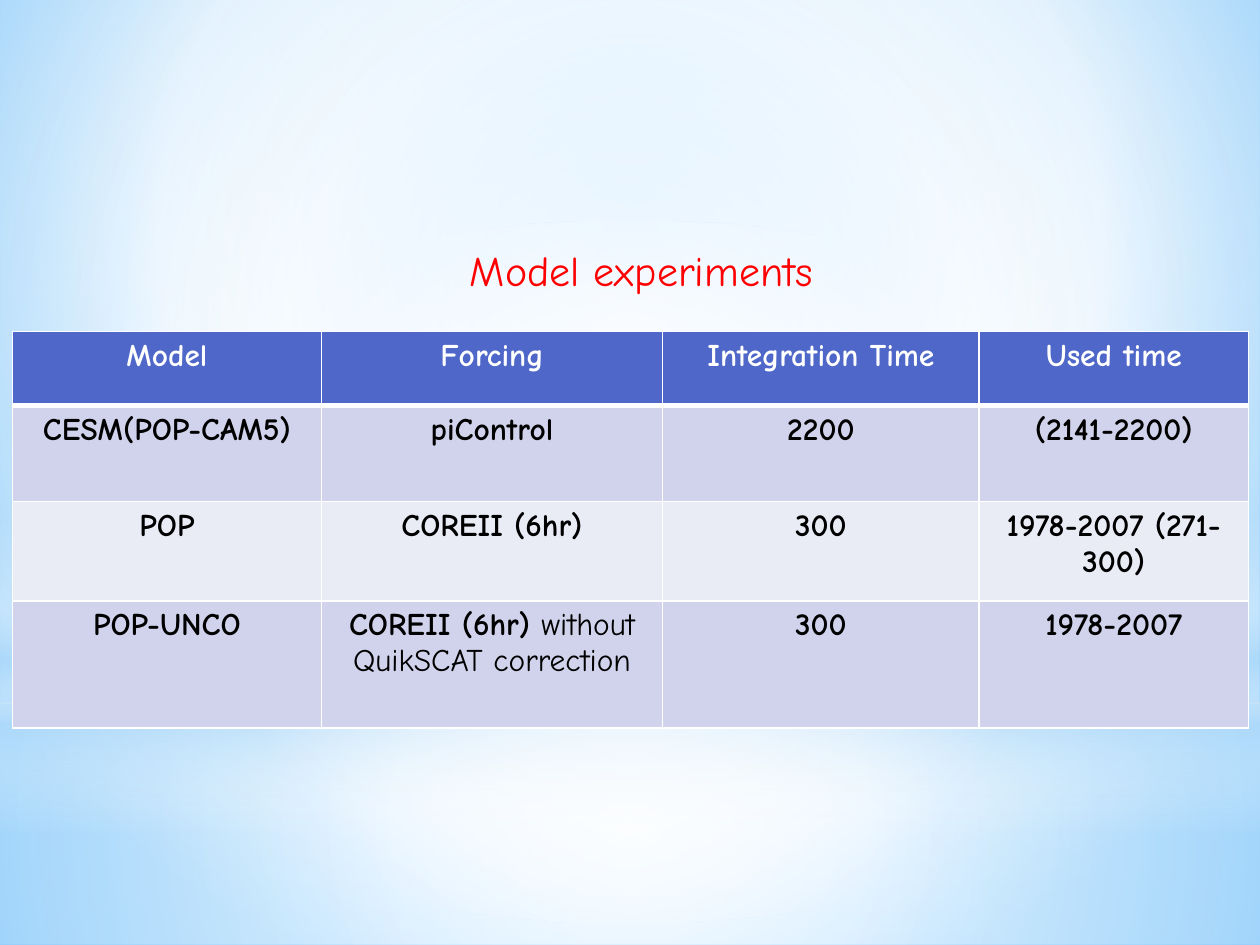
from dataclasses import dataclass

from lxml import etree
from pptx import Presentation
from pptx import util as u
from pptx.dml.color import RGBColor
from pptx.enum import shapes, text
from pptx.oxml.ns import qn


@dataclass(frozen=True)
class Theme:
    font: str = "Comic Neue"
    title_size: int = 24
    table_size: int = 18
    title: str = "FF0000"
    header: str = "4E67C8"
    bands: tuple = ("D0D3EB", "E9EBF5")
    white: str = "FFFFFF"
    ink: str = "000000"
    sky: str = "B4DCFA"
    sky_mid: str = "9ED5FF"
    sky_deep: str = "5BB9FF"


T = Theme()
W, H = 10, 7.5
CENTRE = (50, 50, 50, 50)

COLS = (2.45, 2.71, 2.51, 2.14)
ROWS = (0.59, 0.76, 0.79, 1.01)
# Each cell is its bold text, optionally followed by regular text
EXPERIMENTS = (
    (("Model",), ("Forcing",), ("Integration Time",), ("Used time",)),
    (("CESM(POP-CAM5)",), ("piControl",), ("2200",), ("(2141-2200)",)),
    (("POP",), ("COREII (6hr)",), ("300",), ("1978-2007 (271-300)",)),
    (("POP-UNCO",), ("COREII (6hr) ", "without QuikSCAT correction"),
     ("300",), ("1978-2007",)),
)


def rgb(color):
    return RGBColor.from_string(color)


def add_color(parent, color, alpha=100):
    clr = etree.SubElement(parent, qn("a:srgbClr"), val=color)
    if alpha < 100:
        etree.SubElement(clr, qn("a:alpha"), val=str(alpha * 1000))


def set_gradient(owner, fill, stops, focus=None, angle=90):
    """Radial gradient around focus (l, t, r, b in %), or linear at angle."""
    fill.solid()
    solid = owner.find(".//" + qn("a:solidFill"))
    grad = etree.Element(qn("a:gradFill"), rotWithShape="1")
    gs_list = etree.SubElement(grad, qn("a:gsLst"))
    for pos, *color in stops:
        add_color(etree.SubElement(gs_list, qn("a:gs"), pos=str(pos * 1000)), *color)
    if focus:
        radial = etree.SubElement(grad, qn("a:path"), path="circle")
        etree.SubElement(radial, qn("a:fillToRect"),
                         {k: str(v * 1000) for k, v in zip("ltrb", focus)})
    else:
        etree.SubElement(grad, qn("a:lin"), ang=str(angle * 60000), scaled="0")
    solid.getparent().replace(solid, grad)


def add_glow(s, kind, top, height, stops, focus=CENTRE):
    """Full-width translucent layer; top and height are shares of the slide."""
    sp = s.shapes.add_shape(kind, 0, u.Inches(top * H), u.Inches(W), u.Inches(height * H))
    sp.shadow.inherit = False
    sp.line.fill.background()
    set_gradient(sp._element.spPr, sp.fill, stops, focus)


def add_backdrop(s):
    rect, oval = shapes.MSO_SHAPE.RECTANGLE, shapes.MSO_SHAPE.OVAL
    set_gradient(s.element, s.background.fill,
                 [(0, T.sky_mid), (60, T.white), (100, T.sky_deep)], (20, 10, 20, 60))
    horizon = 0.744
    add_glow(s, rect, horizon, 1 - horizon,
             [(0, T.white, 91), (37, T.white, 76), (100, T.sky, 79)])
    add_glow(s, rect, 0, horizon,
             [(0, T.white, 89), (48, T.white, 62), (100, T.sky, 79)])
    add_glow(s, rect, 0.55, 1 / 3,
             [(0, T.white, 0), (29, T.white, 30), (45, T.sky, 40),
              (55, T.white, 26), (65, T.sky, 60), (100, T.white, 0)], focus=None)
    add_glow(s, oval, 0.233, horizon, [(0, T.white), (56, T.white, 0)])


def write(p, parts, size, color, bold):
    for i, part in enumerate(parts):
        r = p.add_run()
        r.text = part
        if len(parts) > 1:
            r.font.bold = bold and i == 0
    p.alignment = text.PP_ALIGN.CENTER
    p.font.name, p.font.size, p.font.bold = T.font, u.Pt(size), bold
    p.font.color.rgb = rgb(color)


def add_title(s, title):
    box = s.shapes.add_textbox(*map(u.Inches, (3.49, 1.89, 3.2, 0.5)))
    tf = box.text_frame
    tf.word_wrap = False
    tf.auto_size = text.MSO_AUTO_SIZE.SHAPE_TO_FIT_TEXT
    write(tf.paragraphs[0], (title,), T.title_size, T.title, False)


def set_borders(cell, bottom):
    tc_pr = cell._tc.get_or_add_tcPr()
    for side, width in zip("LRTB", (1, 1, 1, bottom)):
        ln = etree.SubElement(tc_pr, qn("a:ln" + side), w=str(u.Pt(width)))
        add_color(etree.SubElement(ln, qn("a:solidFill")), T.white)


def add_experiments(s):
    frame = s.shapes.add_table(len(ROWS), len(COLS), u.Inches(0.1), u.Inches(2.63),
                               u.Inches(sum(COLS)), u.Inches(sum(ROWS)))
    table = frame.table
    for col, width in zip(table.columns, COLS):
        col.width = u.Inches(width)
    for i, (row, height) in enumerate(zip(table.rows, ROWS)):
        row.height = u.Inches(height)
        header = i == 0
        for cell, parts in zip(row.cells, EXPERIMENTS[i]):
            set_borders(cell, bottom=3 if header else 1)
            cell.fill.solid()
            cell.fill.fore_color.rgb = rgb(T.header if header else T.bands[(i - 1) % 2])
            write(cell.text_frame.paragraphs[0], parts, T.table_size,
                  T.white if header else T.ink, True)


def main():
    prs = Presentation()
    prs.slide_width, prs.slide_height = u.Inches(W), u.Inches(H)
    s = prs.slides.add_slide(prs.slide_layouts[6])
    add_backdrop(s)
    add_experiments(s)
    add_title(s, "Model experiments")
    prs.save("out.pptx")


if __name__ == "__main__":
    main()
